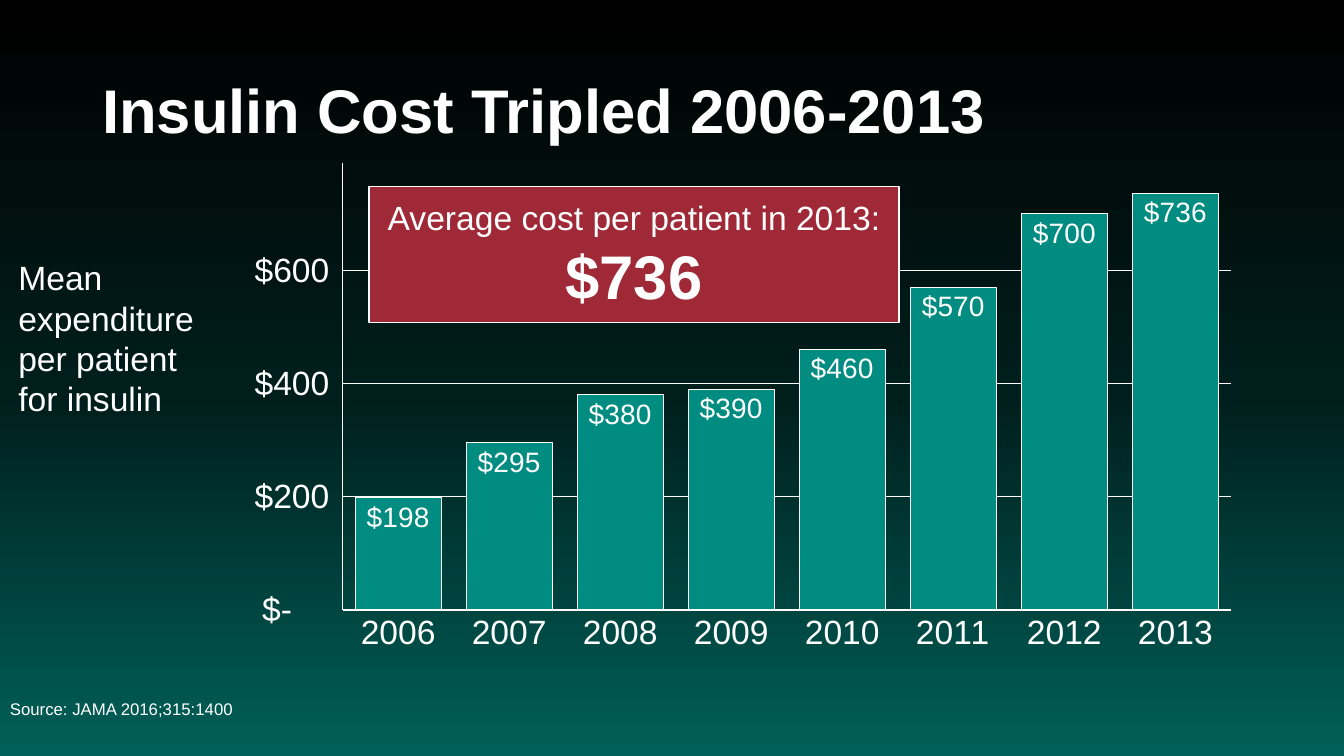
from copy import deepcopy

from pptx import Presentation
from pptx.chart.data import CategoryChartData
from pptx.dml.color import RGBColor
from pptx.enum import chart as ch, shapes, text as tx
from pptx.oxml import parse_xml, ns
from pptx.util import Pt

WHITE = "FFFFFF"
FONT = "Arial"


def rgb(code):
    return RGBColor.from_string(code)


def write(shape, lines, align=tx.PP_ALIGN.LEFT, space=None):
    """Fill a shape with lines of (text, size, bold)."""
    frame = shape.text_frame
    frame.word_wrap = True
    frame.vertical_anchor = tx.MSO_ANCHOR.MIDDLE
    for i, (words, size, bold) in enumerate(lines):
        para = frame.add_paragraph() if i else frame.paragraphs[0]
        para.alignment = align
        para.line_spacing = space
        run = para.add_run()
        run.text = words
        font = run.font
        font.name, font.size, font.bold = FONT, Pt(size), bold
        font.color.rgb = rgb(WHITE)


prs = Presentation()
prs.slide_width, prs.slide_height = Pt(960), Pt(540)
slide = prs.slides.add_slide(prs.slide_layouts[6])

# Background gradient, top to bottom
fill = slide.background.fill
fill.gradient()
fill.gradient_angle = 270
stops = slide.element.find(".//" + ns.qn("a:gsLst"))
stops.append(deepcopy(stops[-1]))
shades = [(0, "000000"), (0.52, "001E1C"), (1, "006059")]
for stop, (place, shade) in zip(fill.gradient_stops, shades):
    stop.position = place
    stop.color.rgb = rgb(shade)

# Title, source and axis caption
labels = [
    ((66, 29, 828, 104), "Insulin Cost Tripled 2006-2013", 44, True, 0.9),
    ((0, 474, 648, 66), "Source: JAMA 2016;315:1400", 12, False, 0.9),
    ((6, 179.3, 156, 124), "Mean expenditure per patient for insulin", 24, False, None),
]
for box, words, size, bold, space in labels:
    label = slide.shapes.add_textbox(*map(Pt, box))
    write(label, [(words, size, bold)], space=space)

# Column chart
data = CategoryChartData()
data.categories = [str(year) for year in range(2006, 2014)]
data.add_series("Series 1", [198, 295, 380, 390, 460, 570, 700, 736])
chart = slide.shapes.add_chart(
    ch.XL_CHART_TYPE.COLUMN_CLUSTERED, Pt(160), Pt(109.5), Pt(733.5), Pt(364.5), data
).chart
chart.has_legend = chart.has_title = False

cats, vals = chart.category_axis, chart.value_axis
vals.minimum_scale, vals.maximum_scale, vals.major_unit = 0, 790, 200
vals.has_major_gridlines = True
grid = vals.major_gridlines.format.line
grid.width = Pt(0.5)
grid.color.rgb = rgb(WHITE)
ticks = vals.tick_labels
ticks.number_format = r'_("$"* #,##0_);_("$"* \(#,##0\);_("$"* "-"??_);_(@_)'
ticks.number_format_is_linked = False

plot = chart.plots[0]
plot.gap_width, plot.overlap = 29, -27
plot.vary_by_categories = False
bars = plot.series[0]
bars.format.fill.solid()
bars.format.fill.fore_color.rgb = rgb("008C81")
tags = bars.data_labels
tags.show_value = True
tags.position = ch.XL_LABEL_POSITION.INSIDE_END
tags.number_format = '"$"#,##0'
tags.number_format_is_linked = False

for axis in (cats, vals):
    axis.major_tick_mark = axis.minor_tick_mark = ch.XL_TICK_MARK.NONE
for part in (cats, vals, bars):
    part.format.line.width = Pt(0.75)
    part.format.line.color.rgb = rgb(WHITE)
for font, size in [(chart.font, 24), (cats.tick_labels.font, 24),
                   (ticks.font, 24), (tags.font, 20)]:
    font.name, font.size = FONT, Pt(size)
    font.color.rgb = rgb(WHITE)

# Fixed plot area, as shares of the chart
area = chart.element.find(".//" + ns.qn("c:plotArea"))
for old in area.findall(ns.qn("c:layout")):
    area.remove(old)
sides = "".join(f'<c:{k} val="{v}"/>' for k, v in [
    ("layoutTarget", "inner"), ("xMode", "edge"), ("yMode", "edge"),
    ("x", 0.1156), ("y", 0.019), ("w", 0.865), ("h", 0.876)])
area.insert(0, parse_xml(
    f'<c:layout {ns.nsdecls("c")}><c:manualLayout>{sides}</c:manualLayout></c:layout>'))

# Callout
call = slide.shapes.add_shape(
    shapes.MSO_SHAPE.RECTANGLE, Pt(263.5), Pt(133.2), Pt(378.7), Pt(97))
call.shadow.inherit = False
call.fill.solid()
call.fill.fore_color.rgb = rgb("9F2936")
call.line.width = Pt(1)
call.line.color.rgb = rgb(WHITE)
write(call, [("Average cost per patient in 2013:", 24, False), ("$736", 44, True)],
      align=tx.PP_ALIGN.CENTER)

prs.save("out.pptx")
